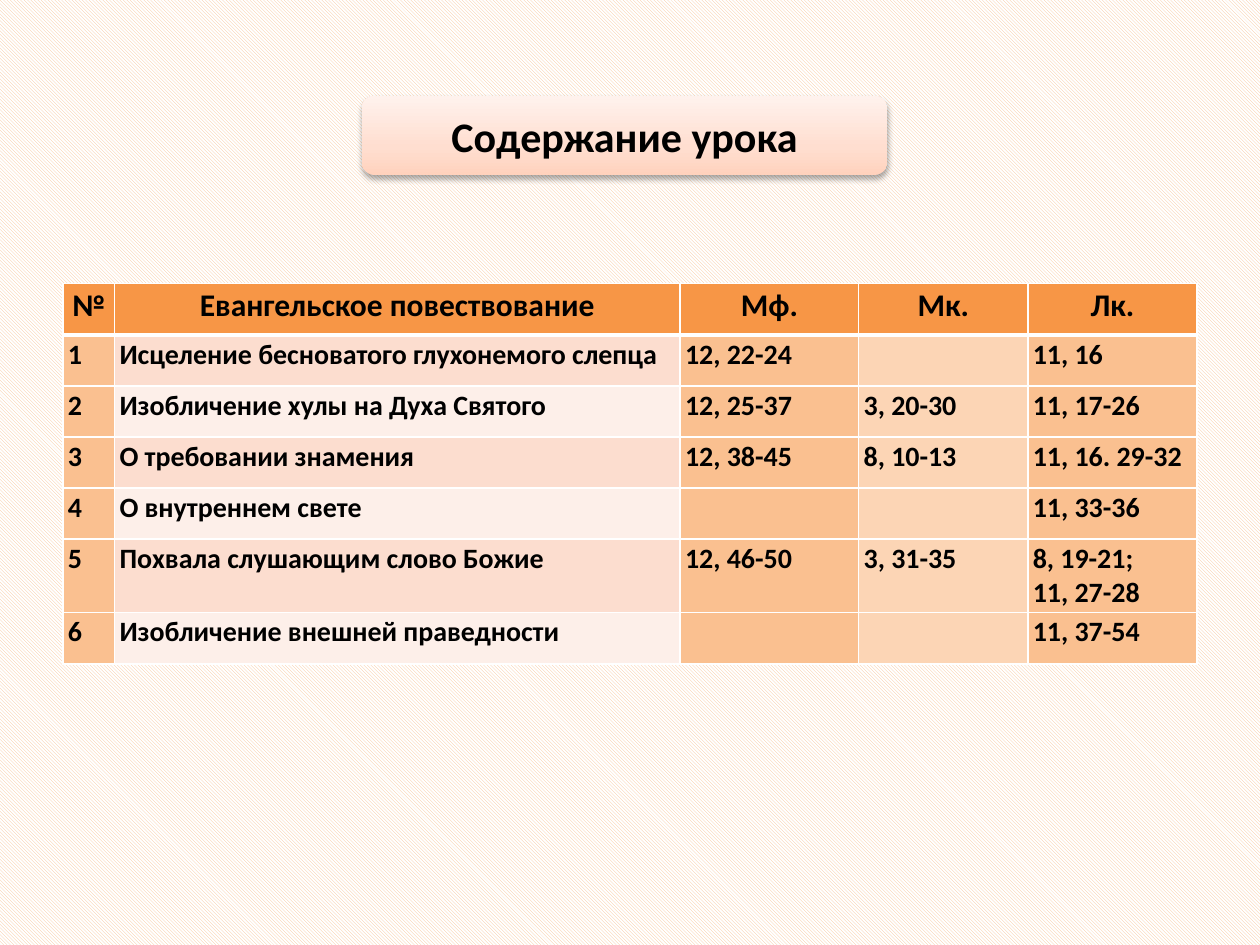
from typing import NamedTuple

from lxml.etree import SubElement
from pptx import Presentation
from pptx.dml.color import RGBColor
from pptx.enum.dml import MSO_PATTERN
from pptx.enum.shapes import MSO_SHAPE
from pptx.enum.text import MSO_ANCHOR, PP_ALIGN
from pptx.oxml import parse_xml
from pptx.oxml.ns import nsdecls, qn
from pptx.util import Cm, Pt

FONT = "Calibri"
BLACK = RGBColor(0x00, 0x00, 0x00)
WHITE = RGBColor(0xFF, 0xFF, 0xFF)
ORANGE = RGBColor(0xF7, 0x96, 0x46)
LIGHT_ORANGE = RGBColor(0xFA, 0xC0, 0x90)
PALE_ORANGE = RGBColor(0xFC, 0xD5, 0xB5)
PINK = RGBColor(0xFC, 0xDD, 0xCF)
PALE_PINK = RGBColor(0xFD, 0xEF, 0xE9)
TITLE_STOPS = (
    (0, RGBColor(0xFF, 0xD2, 0xBD)),
    (35, RGBColor(0xFF, 0xDE, 0xD0)),
    (100, RGBColor(0xFF, 0xF2, 0xED)),
)


class Reading(NamedTuple):
    story: str
    matthew: str
    mark: str
    luke: str


HEADINGS = ("№", "Евангельское повествование", "Мф.", "Мк.", "Лк.")
READINGS = (
    Reading("Исцеление бесноватого глухонемого слепца", "12, 22-24", "", "11, 16"),
    Reading("Изобличение хулы на Духа Святого", "12, 25-37", "3, 20-30", "11, 17-26"),
    Reading("О требовании знамения", "12, 38-45", "8, 10-13", "11, 16. 29-32"),
    Reading("О внутреннем свете", "", "", "11, 33-36"),
    Reading("Похвала слушающим слово Божие", "12, 46-50", "3, 31-35", "8, 19-21;\n11, 27-28"),
    Reading("Изобличение внешней праведности", "", "", "11, 37-54"),
)
COLUMN_WIDTHS = (Cm(1.04), Cm(11.4), Cm(3.6), Cm(3.41), Cm(3.41))
ROW_HEIGHT = Cm(1.03)


def style_text(text_frame, size: int, alignment: PP_ALIGN) -> None:
    for paragraph in text_frame.paragraphs:
        paragraph.alignment = alignment
        paragraph.font.name = FONT
        paragraph.font.size = Pt(size)
        paragraph.font.bold = True
        paragraph.font.color.rgb = BLACK


def add_borders(cell, top: float, bottom: float) -> None:
    """Draw white cell borders; top and bottom widths are in points."""
    properties = cell._tc.get_or_add_tcPr()
    for side, width in (("L", 1), ("R", 1), ("T", top), ("B", bottom)):
        line = SubElement(properties, qn(f"a:ln{side}"), w=str(Pt(width)))
        fill = SubElement(line, qn("a:solidFill"))
        SubElement(fill, qn("a:srgbClr"), val=str(WHITE))


def fill_cell(cell, text: str, color: RGBColor, row: int) -> None:
    is_heading = row == 0
    cell.text = text
    cell.margin_left = cell.margin_right = Cm(0.1)
    cell.margin_top = cell.margin_bottom = Cm(0.05)
    add_borders(cell, top=3 if row == 1 else 1, bottom=3 if is_heading else 1)
    cell.fill.solid()
    cell.fill.fore_color.rgb = color
    if is_heading:
        style_text(cell.text_frame, 18, PP_ALIGN.CENTER)
    else:
        style_text(cell.text_frame, 16, PP_ALIGN.LEFT)


def add_readings_table(slide) -> None:
    row_count = len(READINGS) + 1
    table = slide.shapes.add_table(
        row_count, len(HEADINGS), Cm(1.27), Cm(5.72),
        sum(COLUMN_WIDTHS), ROW_HEIGHT * row_count,
    ).table
    table.first_row = table.horz_banding = False
    for column, width in zip(table.columns, COLUMN_WIDTHS):
        column.width = width
    for row in table.rows:
        row.height = ROW_HEIGHT

    for column, heading in enumerate(HEADINGS):
        fill_cell(table.cell(0, column), heading, ORANGE, 0)
    for number, reading in enumerate(READINGS, start=1):
        story_color = PINK if number % 2 else PALE_PINK
        colors = (LIGHT_ORANGE, story_color, LIGHT_ORANGE, PALE_ORANGE, LIGHT_ORANGE)
        for column, (text, color) in enumerate(zip((str(number), *reading), colors)):
            fill_cell(table.cell(number, column), text, color, number)


def add_title(slide, text: str) -> None:
    """Add the rounded title plate with its gradient and soft shadow."""
    shape = slide.shapes.add_shape(
        MSO_SHAPE.ROUNDED_RECTANGLE, Cm(7.29), Cm(1.93), Cm(10.6), Cm(1.6)
    )
    shape.line.fill.background()
    stops = "".join(
        f'<a:gs pos="{position * 1000}"><a:srgbClr val="{color}"/></a:gs>'
        for position, color in TITLE_STOPS
    )
    geometry = shape._element.spPr.find(qn("a:prstGeom"))
    geometry.addnext(parse_xml(
        f'<a:gradFill {nsdecls("a")} rotWithShape="1"><a:gsLst>{stops}</a:gsLst>'
        '<a:lin ang="16200000" scaled="1"/></a:gradFill>'
    ))
    shape._element.spPr.append(parse_xml(
        f'<a:effectLst {nsdecls("a")}>'
        f'<a:outerShdw blurRad="{Pt(3.5)}" dist="{Pt(2.2)}" dir="5400000" rotWithShape="0">'
        f'<a:srgbClr val="{BLACK}"><a:alpha val="32000"/></a:srgbClr>'
        '</a:outerShdw></a:effectLst>'
    ))
    shape.text_frame.text = text
    shape.text_frame.vertical_anchor = MSO_ANCHOR.MIDDLE
    style_text(shape.text_frame, 24, PP_ALIGN.CENTER)


def main() -> None:
    presentation = Presentation()
    presentation.slide_width = Cm(25.4)
    presentation.slide_height = Cm(19.05)
    slide = presentation.slides.add_slide(presentation.slide_layouts[6])
    background = slide.background.fill
    background.patterned()
    background.pattern = MSO_PATTERN.DARK_DOWNWARD_DIAGONAL
    background.fore_color.rgb = LIGHT_ORANGE
    background.back_color.rgb = WHITE
    add_readings_table(slide)
    add_title(slide, "Содержание урока")
    presentation.save("out.pptx")


if __name__ == "__main__":
    main()
